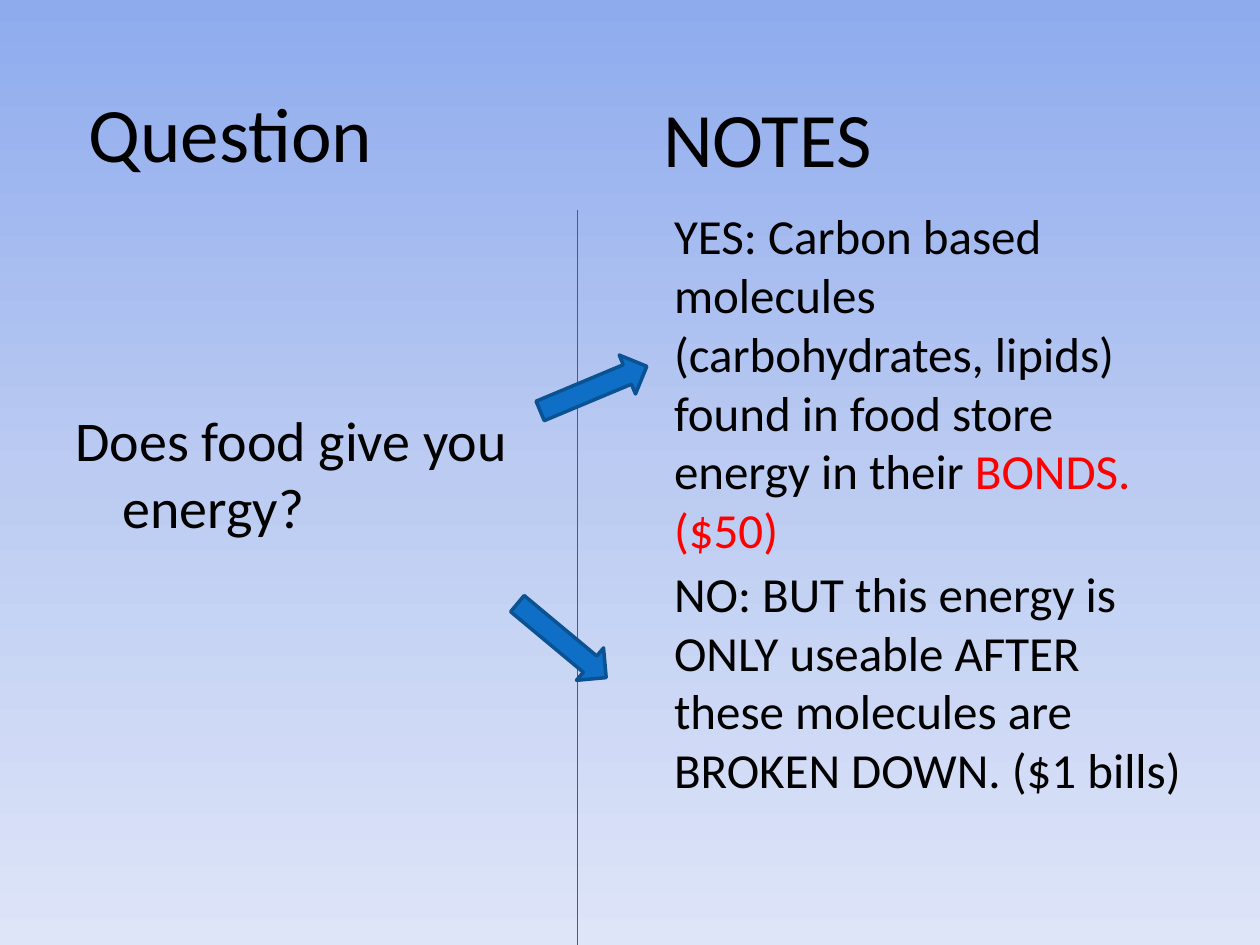
from copy import deepcopy

from lxml import etree
from pptx import Presentation
from pptx.dml.color import RGBColor
from pptx.enum.shapes import MSO_CONNECTOR, MSO_SHAPE
from pptx.enum.text import MSO_ANCHOR, MSO_AUTO_SIZE, PP_ALIGN
from pptx.oxml.ns import qn
from pptx.util import Cm, Pt

STRAIGHT = MSO_CONNECTOR.STRAIGHT
RIGHT_ARROW = MSO_SHAPE.RIGHT_ARROW
TOP, MIDDLE = MSO_ANCHOR.TOP, MSO_ANCHOR.MIDDLE
LEFT, CENTER = PP_ALIGN.LEFT, PP_ALIGN.CENTER
FIXED, GROW = MSO_AUTO_SIZE.NONE, MSO_AUTO_SIZE.SHAPE_TO_FIT_TEXT

FONT = "Calibri"
BLACK, RED = "000000", "FF0000"
WIDTH, HEIGHT = 25.4, 19.05
DIVIDER_X, DIVIDER_TOP = 11.64, 4.23
BACKGROUND = [(0, "8EABEE"), (0.5, "BBCBF2"), (1, "DEE5F8")]


def rgb(value):
    return RGBColor.from_string(value)


def add_text(s, box, paragraphs, size, align=LEFT, anchor=TOP, fit=FIXED, hanging=0):
    """Each paragraph is a list of (text, colour) runs; box is in cm."""
    sp = s.shapes.add_textbox(*map(Cm, box))
    tf = sp.text_frame
    tf.word_wrap = True
    tf.auto_size = fit
    tf.vertical_anchor = anchor
    for i, runs in enumerate(paragraphs):
        p = tf.paragraphs[0] if i == 0 else tf.add_paragraph()
        p.alignment = align
        if hanging:
            pPr = p._p.get_or_add_pPr()
            pPr.set("marL", str(Cm(hanging)))
            pPr.set("indent", str(-Cm(hanging)))
        for text, color in runs:
            r = p.add_run()
            r.text = text
            r.font.name = FONT
            r.font.size = Pt(size)
            r.font.color.rgb = rgb(color)


def paint_background(s):
    fill = s.background.fill
    fill.gradient()
    fill.gradient_angle = 270
    stop_list = s._element.find(".//" + qn("a:gsLst"))
    stop_list.insert(1, deepcopy(stop_list[0]))
    for stop, (position, color) in zip(fill.gradient_stops, BACKGROUND):
        stop.position = position
        stop.color.rgb = rgb(color)


def add_question_column(s, x, y):
    add_text(s, (x - 6.78, y + 1.07, 22.86, 3.18), [[("Question", BLACK)]], 44,
             align=CENTER, anchor=MIDDLE)
    add_text(s, (x + 1.27, y + 8.05, 9.53, 12.5),
             [[("Does food give you energy?", BLACK)]], 32, hanging=0.95)


def add_notes_column(s, x, y):
    add_text(s, (x + 1.48, y + 1.7, 11.23, 2.13), [[("NOTES", BLACK)]], 44, fit=GROW)
    yes = [
        [("YES: Carbon based molecules (carbohydrates, lipids) found in food store "
          "energy in their ", BLACK), ("BONDS.", RED)],
        [("($50)", RED)],
    ]
    no = [[("NO: BUT this energy is ONLY useable AFTER these molecules are "
            "BROKEN DOWN. ($1 bills)", BLACK)]]
    add_text(s, (x + 1.7, y + 4.02, 10.8, 8.64), yes, 28)
    add_text(s, (x + 1.7, y + 11.23, 10.8, 5.05), no, 28, fit=GROW)


def add_divider(s, x, top, bottom):
    line = s.shapes.add_connector(STRAIGHT, Cm(x), Cm(top), Cm(x), Cm(bottom))
    line.line.color.rgb = rgb("0A6DC6")
    line.line.width = Pt(0.75)
    etree.SubElement(line._element.spPr, qn("a:effectLst"))


def add_answer_arrow(s, x, y, rotation):
    arrow = s.shapes.add_shape(RIGHT_ARROW, Cm(x), Cm(y), Cm(2.33), Cm(0.85))
    arrow.rotation = rotation
    arrow.shadow.inherit = False
    arrow.fill.solid()
    arrow.fill.fore_color.rgb = rgb("0F6FC6")
    arrow.line.color.rgb = rgb("0B5292")
    arrow.line.width = Pt(2)


def main():
    prs = Presentation()
    prs.slide_width, prs.slide_height = Cm(WIDTH), Cm(HEIGHT)
    s = prs.slides.add_slide(prs.slide_layouts[6])
    paint_background(s)
    add_question_column(s, 0, 0)
    add_divider(s, DIVIDER_X, DIVIDER_TOP, HEIGHT)
    add_answer_arrow(s, 10.8, 7.41, 337.3)
    add_answer_arrow(s, 10.16, 12.49, 39.8)
    add_notes_column(s, DIVIDER_X, 0)
    prs.save("out.pptx")


if __name__ == "__main__":
    main()
